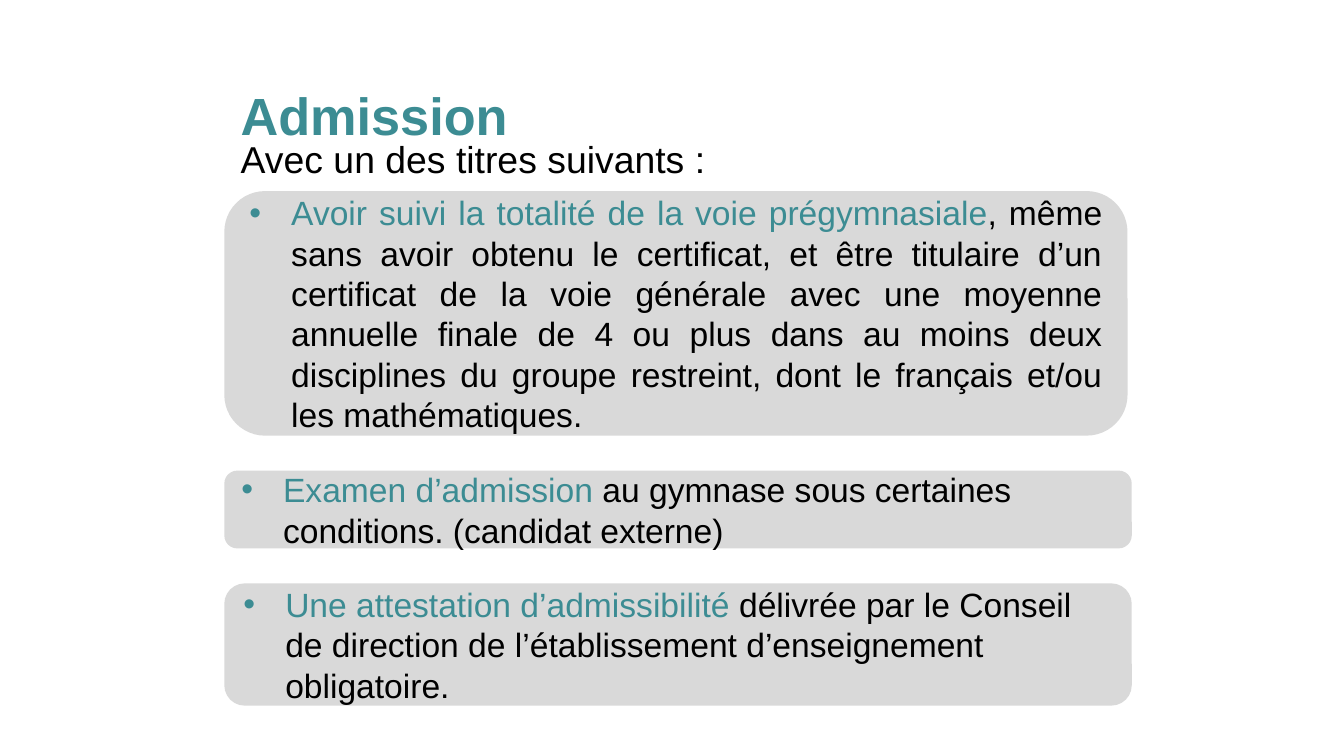
from lxml import etree
from pptx import Presentation, util as u
from pptx.dml.color import RGBColor
from pptx.enum import shapes, text
from pptx.oxml.ns import qn

COLOURS = {"accent": "3C8C93", "body": "000000", "panel": "D9D9D9"}
INDENT = u.Cm(0.79)
LEFT = 4.24


class AdmissionSlide:
    font = "Arial"

    def __init__(self, deck):
        self.page = deck.slides.add_slide(deck.slide_layouts[6])

    def span(self, para, wording, size, colour, bold=False):
        span = para.add_run()
        span.text = wording
        span.font.name = self.font
        span.font.size = u.Pt(size)
        span.font.bold = bold
        span.font.color.rgb = RGBColor.from_string(COLOURS[colour])

    def bullet(self, para):
        props = para._p.get_or_add_pPr()
        props.set("marL", str(INDENT))
        props.set("indent", str(-INDENT))
        colour = etree.SubElement(props, qn("a:buClr"))
        etree.SubElement(colour, qn("a:srgbClr"), val=COLOURS["accent"])
        etree.SubElement(props, qn("a:buFont"), typeface=self.font)
        etree.SubElement(props, qn("a:buChar"), char="•")

    def line(self, place, wording, size, colour, bold=False, inset=0.13):
        box = self.page.shapes.add_textbox(*map(u.Cm, place))
        frame = box.text_frame
        frame.word_wrap = True
        frame.margin_top = u.Cm(inset)
        self.span(frame.paragraphs[0], wording, size, colour, bold)

    def panel(self, place, lead, rest, align):
        box = self.page.shapes.add_shape(
            shapes.MSO_SHAPE.ROUNDED_RECTANGLE, *map(u.Cm, place))
        box.shadow.inherit = False
        box.fill.solid()
        box.fill.fore_color.rgb = RGBColor.from_string(COLOURS["panel"])
        box.line.fill.background()
        frame = box.text_frame
        frame.word_wrap = True
        frame.vertical_anchor = text.MSO_ANCHOR.MIDDLE
        para = frame.paragraphs[0]
        para.alignment = align
        self.bullet(para)
        self.span(para, lead, 18, "accent")
        self.span(para, rest, 18, "body")


def main():
    deck = Presentation()
    deck.slide_width, deck.slide_height = u.Cm(25.4), u.Cm(14.28)
    slide = AdmissionSlide(deck)

    # Heading and introduction
    slide.line((4.3, 0.74, 18.75, 1.47), "Admission", 28, "accent",
               bold=True, inset=0.83)
    slide.line((4.3, 2.44, 16.15, 2.82), "Avec un des titres suivants :",
               20, "body")

    # Admission conditions: top, width, height, lead, rest, alignment
    conditions = [
        (3.61, 17.07, 4.62, "Avoir suivi la totalité de la voie prégymnasiale",
         ", même sans avoir obtenu le certificat, et être titulaire d’un "
         "certificat de la voie générale avec une moyenne annuelle finale de "
         "4 ou plus dans au moins deux disciplines du groupe restreint, dont "
         "le français et/ou les mathématiques.", text.PP_ALIGN.JUSTIFY),
        (8.89, 17.15, 1.47, "Examen d’admission ",
         "au gymnase sous certaines conditions. (candidat externe)",
         text.PP_ALIGN.LEFT),
        (11.02, 17.15, 2.31, "Une attestation d’admissibilité ",
         "délivrée par le Conseil de direction de l’établissement "
         "d’enseignement obligatoire.", text.PP_ALIGN.LEFT),
    ]
    for top, width, height, lead, rest, align in conditions:
        slide.panel((LEFT, top, width, height), lead, rest, align)

    deck.save("out.pptx")


if __name__ == "__main__":
    main()
